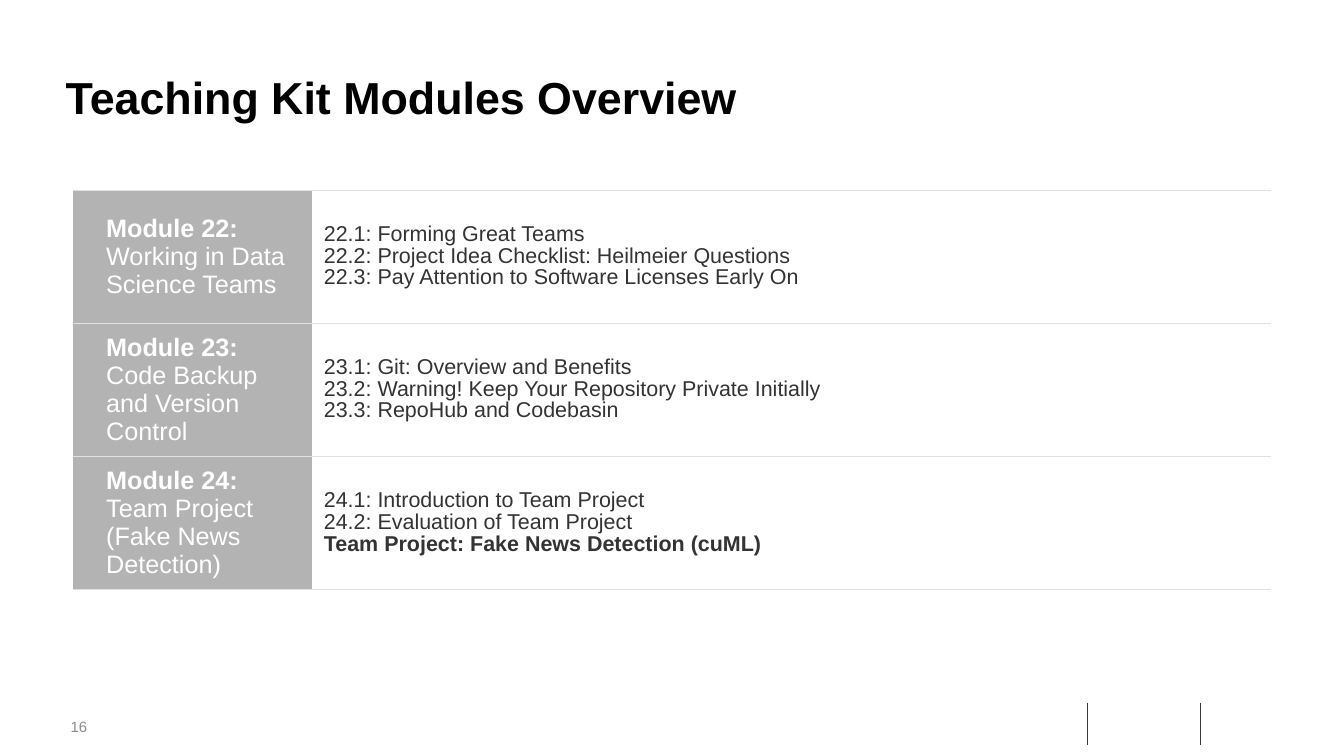
import pptx
import pptx.dml.color
import pptx.enum.shapes
import pptx.enum.text
import pptx.oxml
import pptx.oxml.ns
import pptx.util
from pptx.util import Inches

COLORS = {
    "title": "000000",
    "module": "FFFFFF",
    "module_fill": "B3B3B3",
    "topic": "333333",
    "topic_fill": "FFFFFF",
    "rule": "E1E1E1",
    "footer_line": "383838",
    "page_number": "8C8C8C",
}

# Each module: paragraphs of its heading, then its topics; a run is (text, bold).
MODULES = [
    ([[("Module 22: ", True), ("Working in Data Science Teams", False)]],
     [[("22.1: Forming Great Teams", False)],
      [("22.2: Project Idea Checklist: Heilmeier Questions", False)],
      [("22.3: Pay Attention to Software Licenses Early On", False)]]),
    ([[("Module 23: ", True), ("Code Backup and Version Control", False)]],
     [[("23.1: Git: Overview and Benefits", False)],
      [("23.2: Warning! Keep Your Repository Private Initially", False)],
      [("23.3: RepoHub and Codebasin", False)]]),
    ([[("Module 24:", True)], [("Team Project (Fake News Detection)", False)]],
     [[("24.1: Introduction to Team Project", False)],
      [("24.2: Evaluation of Team Project", False)],
      [("Team Project: Fake News Detection (cuML)", True)]]),
]


def rgb(name):
    return pptx.dml.color.RGBColor.from_string(COLORS[name])


class SlideBuilder:
    """Holds the slide being built and the style its elements share."""

    font = "Arial"
    no_table_style = "{2D5ABB26-0587-4C30-8999-92F81FD0307C}"

    def __init__(self, slide):
        self.slide = slide

    def add_paragraphs(self, frame, paragraphs, size, color, line_spacing=1.0):
        for index, runs in enumerate(paragraphs):
            paragraph = frame.add_paragraph() if index else frame.paragraphs[0]
            paragraph.line_spacing = line_spacing
            for text, bold in runs:
                run = paragraph.add_run()
                run.text = text
                run.font.name = self.font
                run.font.size = pptx.util.Pt(size)
                run.font.bold = bold
                run.font.color.rgb = rgb(color)

    def text(self, box, paragraphs, size, color, anchor, inset=(0, 0), line_spacing=1.0):
        frame = self.slide.shapes.add_textbox(*map(Inches, box)).text_frame
        frame.word_wrap = True
        frame.vertical_anchor = anchor
        frame.margin_left = frame.margin_right = Inches(inset[0])
        frame.margin_top = frame.margin_bottom = Inches(inset[1])
        self.add_paragraphs(frame, paragraphs, size, color, line_spacing)

    def vertical_line(self, x, top, bottom, color):
        line = self.slide.shapes.add_connector(
            pptx.enum.shapes.MSO_CONNECTOR.STRAIGHT,
            Inches(x), Inches(top), Inches(x), Inches(bottom))
        line.line.color.rgb = rgb(color)
        line.line.width = pptx.util.Pt(1)
        line._element.spPr.append(pptx.oxml.parse_xml(
            f'<a:effectLst {pptx.oxml.ns.nsdecls("a")}/>'))

    def rule_cell(self, cell):
        """Draw rules above and below a cell and none at its sides."""
        solid = f'<a:solidFill><a:srgbClr val="{COLORS["rule"]}"/></a:solidFill>'
        sides = {"lnL": "<a:noFill/>", "lnR": "<a:noFill/>", "lnT": solid, "lnB": solid}
        properties = cell._tc.get_or_add_tcPr()
        for index, (side, fill) in enumerate(sides.items()):
            properties.insert(index, pptx.oxml.parse_xml(
                f'<a:{side} {pptx.oxml.ns.nsdecls("a")} w="12700">{fill}</a:{side}>'))

    def cell(self, cell, paragraphs, size, color, fill, left, line_spacing=1.0):
        cell.vertical_anchor = pptx.enum.text.MSO_ANCHOR.MIDDLE
        cell.margin_left, cell.margin_right = Inches(left), Inches(0.17)
        cell.margin_top = cell.margin_bottom = Inches(0.08)
        cell.fill.solid()
        cell.fill.fore_color.rgb = rgb(fill)
        self.rule_cell(cell)
        self.add_paragraphs(cell.text_frame, paragraphs, size, color, line_spacing)

    def module_table(self, modules, left, top, widths, row_height):
        frame = self.slide.shapes.add_table(
            len(modules), len(widths), Inches(left), Inches(top),
            Inches(sum(widths)), Inches(row_height * len(modules)))
        table = frame.table
        table.first_row = table.horz_banding = False
        table._tbl.tblPr.find(pptx.oxml.ns.qn("a:tableStyleId")).text = self.no_table_style
        for column, width in zip(table.columns, widths):
            column.width = Inches(width)
        for index, (heading, topics) in enumerate(modules):
            table.rows[index].height = Inches(row_height)
            topics_cell = table.cell(index, 1)
            self.cell(table.cell(index, 0), heading, 27, "module", "module_fill", 0.5)
            self.cell(topics_cell, topics, 23, "topic", "topic_fill", 0.17, 0.9)
            topic_fill = topics_cell._tc.tcPr.find(
                pptx.oxml.ns.qn("a:solidFill")).find(pptx.oxml.ns.qn("a:srgbClr"))
            topic_fill.append(pptx.oxml.parse_xml(
                f'<a:alpha {pptx.oxml.ns.nsdecls("a")} val="35000"/>'))


def main():
    presentation = pptx.Presentation()
    presentation.slide_width = Inches(20)
    presentation.slide_height = Inches(11.25)
    builder = SlideBuilder(presentation.slides.add_slide(presentation.slide_layouts[6]))
    anchor = pptx.enum.text.MSO_ANCHOR

    for x in (16.18, 17.86):
        builder.vertical_line(x, 10.46, 11.09, "footer_line")
    builder.text((1.05, 10.68, 0.59, 0.27), [[("16", False)]], 16, "page_number", anchor.MIDDLE)
    builder.text((0.88, 0.82, 18.18, 1.08), [[("Teaching Kit Modules Overview", True)]],
                 48, "title", anchor.BOTTOM, inset=(0.1, 0.05), line_spacing=0.9)
    builder.module_table(MODULES, 1.08, 2.83, (3.57, 14.27), 1.98)

    presentation.save("out.pptx")


if __name__ == "__main__":
    main()
